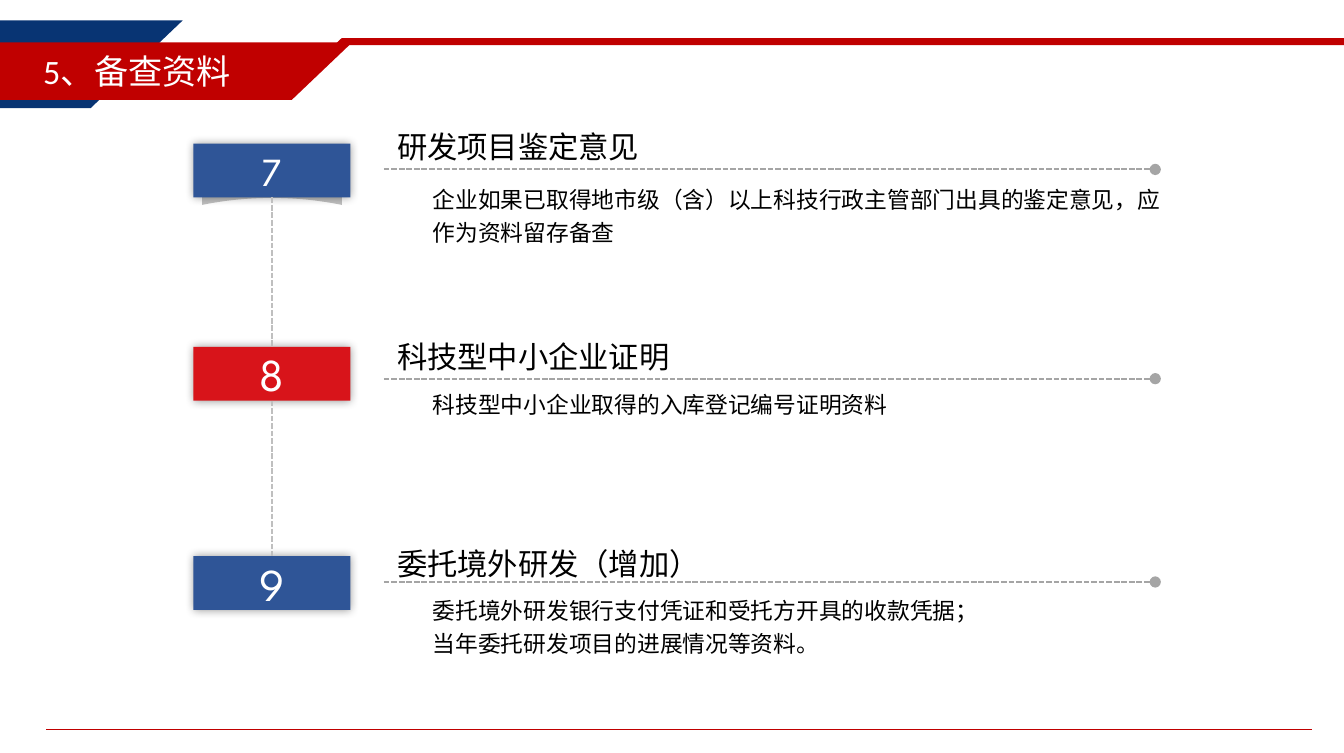
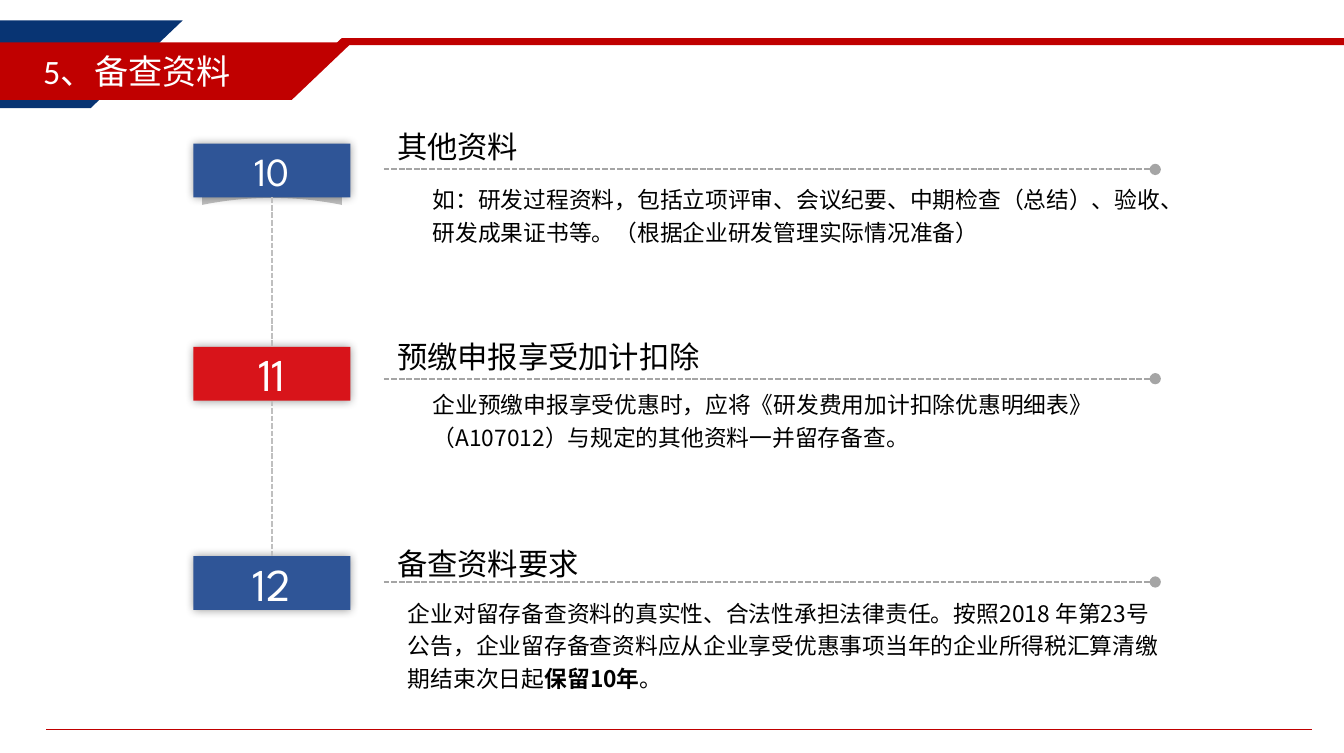
"""Builds two slides listing the records to be kept for review."""
from pptx import Presentation
from pptx.dml.color import RGBColor
from pptx.enum.dml import MSO_LINE
from pptx.enum.shapes import MSO_CONNECTOR, MSO_SHAPE
from pptx.enum.text import MSO_ANCHOR, PP_ALIGN
from pptx.oxml import parse_xml
from pptx.oxml.ns import nsdecls, qn
from pptx.util import Cm, Pt
from lxml.etree import SubElement

COLOURS = {
    "navy": "083473", "crimson": "C00000", "blue": "2F5597", "red": "D8141A",
    "rule": "A5A5A5", "spine": "BFBFBF", "ribbon": "C0C0C0",
    "black": "000000", "white": "FFFFFF",
}
BODY_FONT = "Noto Sans CJK SC"
BADGE_FONT = "League Spartan"
TITLE = "5、备查资料"

BANDS = [
    (-2.06, 0.38, 5.46, 1.63, "navy", ""),
    (-1.45, 0.79, 8, 1.07, "crimson", TITLE),
    (6.22, 0.71, 19.94, 0.13, "crimson", ""),
]
BADGE_LEFT, BADGE_WIDTH, BADGE_HEIGHT = 3.6, 2.92, 1
SPINE_X = BADGE_LEFT + BADGE_WIDTH / 2
ROWS = [
    (2.67, "blue", 21, 2.13, 3.15),
    (6.45, "red", 24, 6.02, 7.04),
    (10.34, "blue", 24, 9.88, 10.82),
]
SLIDES = [
    [
        ("7", "研发项目鉴定意见", 7.8, 3.23, 14.25,
         ["企业如果已取得地市级（含）以上科技行政主管部门出具的鉴定意见，应作为资料留存备查"]),
        ("8", "科技型中小企业证明", 7.8, 7.04, 13.31,
         ["科技型中小企业取得的入库登记编号证明资料"]),
        ("9", "委托境外研发（增加）", 7.8, 10.87, 13.11,
         ["委托境外研发银行支付凭证和受托方开具的收款凭据；",
          "当年委托研发项目的进展情况等资料。"]),
    ],
    [
        ("10", "其他资料", 7.8, 3.23, 14.25,
         ["如：研发过程资料，包括立项评审、会议纪要、中期检查（总结）、验收、"
          "研发成果证书等。（根据企业研发管理实际情况准备）"]),
        ("11", "预缴申报享受加计扣除", 7.8, 7.04, 13.31,
         ["企业预缴申报享受优惠时，应将《研发费用加计扣除优惠明细表》"
          "（A107012）与规定的其他资料一并留存备查。"]),
        ("12", "备查资料要求", 7.34, 10.92, 14.66,
         ["企业对留存备查资料的真实性、合法性承担法律责任。按照2018 年第23"
          "号公告，企业留存备查资料应从企业享受优惠事项当年的企业所得税汇算清"
          "缴期结束次日起**保留10年**。"]),
    ],
]


def write(frame, lines, size, font, colour, align=PP_ALIGN.LEFT, spacing=1.0):
    for index, line in enumerate(lines):
        para = frame.add_paragraph() if index else frame.paragraphs[0]
        para.alignment = align
        para.line_spacing = spacing
        for part, words in enumerate(line.split("**")):
            span = para.add_run()
            span.text = words
            span.font.size = Pt(size)
            span.font.name = font
            span.font.bold = part % 2 == 1
            span.font.color.rgb = RGBColor.from_string(COLOURS[colour])
            SubElement(span.font._element, qn("a:ea")).set("typeface", BODY_FONT)


def draw_line(page, x1, y1, x2, y2, colour, width, dash=None):
    line = page.shapes.add_connector(
        MSO_CONNECTOR.STRAIGHT, Cm(x1), Cm(y1), Cm(x2), Cm(y2))
    line.line.color.rgb = RGBColor.from_string(COLOURS[colour])
    line.line.width = Pt(width)
    if dash:
        line.line.dash_style = dash
    SubElement(line._element.spPr, qn("a:effectLst"))
    return line


deck = Presentation()
deck.slide_width = Cm(25)
deck.slide_height = Cm(14)

for items in SLIDES:
    page = deck.slides.add_slide(deck.slide_layouts[6])

    builder = page.shapes.build_freeform(Cm(SPINE_X - 1.3), Cm(3.45), scale=1.0)
    curve = [(Cm(SPINE_X + 1.3 * step / 8), Cm(3.68 + 0.13 * (step / 8) ** 2))
             for step in range(8, -9, -1)]
    builder.add_line_segments(
        [(Cm(SPINE_X), Cm(3.33)), (Cm(SPINE_X + 1.3), Cm(3.45))] + curve)
    ribbon = builder.convert_to_shape()
    ribbon.shadow.inherit = False
    ribbon.fill.solid()
    ribbon.fill.fore_color.rgb = RGBColor.from_string(COLOURS["ribbon"])
    ribbon.line.fill.background()

    badges = []
    for row, item in zip(ROWS, items):
        badge_top, badge_colour, badge_size, heading_top, rule_y = row
        number, heading, body_left, body_top, body_width, body = item

        badge = page.shapes.add_shape(
            MSO_SHAPE.RECTANGLE, Cm(BADGE_LEFT), Cm(badge_top),
            Cm(BADGE_WIDTH), Cm(BADGE_HEIGHT))
        badge.fill.solid()
        badge.fill.fore_color.rgb = RGBColor.from_string(COLOURS[badge_colour])
        badge.line.fill.background()
        badge.shadow.inherit = False
        badge._element.spPr.find(qn("a:effectLst")).append(parse_xml(
            f'<a:outerShdw {nsdecls("a")} blurRad="{Pt(5)}" dist="0" dir="0">'
            f'<a:srgbClr val="{COLOURS["black"]}"><a:alpha val="40000"/></a:srgbClr>'
            '</a:outerShdw>'))
        badge.text_frame.word_wrap = False
        badge.text_frame.vertical_anchor = MSO_ANCHOR.MIDDLE
        write(badge.text_frame, [number], badge_size, BADGE_FONT, "white",
              PP_ALIGN.CENTER)
        badges.append(badge)

        for left, top, width, height, lines, size in [
            (7.14, heading_top, 13.77, 1, [heading], 16),
            (body_left, body_top, body_width, 1.47, body, 12),
        ]:
            box = page.shapes.add_textbox(Cm(left), Cm(top), Cm(width), Cm(height))
            box.text_frame.word_wrap = True
            write(box.text_frame, lines, size, BODY_FONT, "black", spacing=1.2)

        rule = draw_line(page, 7.14, rule_y, 21.49, rule_y, "rule", 1,
                         MSO_LINE.SQUARE_DOT)
        SubElement(rule.line._ln, qn("a:tailEnd")).set("type", "oval")

    for upper, lower in zip(badges, badges[1:]):
        spine = draw_line(page, SPINE_X, 0, SPINE_X, 1, "spine", 1,
                          MSO_LINE.SQUARE_DOT)
        spine.begin_connect(upper, 2)
        spine.end_connect(lower, 0)

    for left, top, width, height, colour, label in BANDS:
        band = page.shapes.add_shape(
            MSO_SHAPE.PARALLELOGRAM, Cm(left), Cm(top), Cm(width), Cm(height))
        band.adjustments[0] = 1.05
        band.shadow.inherit = False
        band.fill.solid()
        band.fill.fore_color.rgb = RGBColor.from_string(COLOURS[colour])
        band.line.fill.background()
        if label:
            band.text_frame.vertical_anchor = MSO_ANCHOR.MIDDLE
            write(band.text_frame, [label], 18, "Calibri", "white", PP_ALIGN.CENTER)

    draw_line(page, 0.86, 13.56, 24.41, 13.56, "crimson", 0.5)

deck.save("out.pptx")
